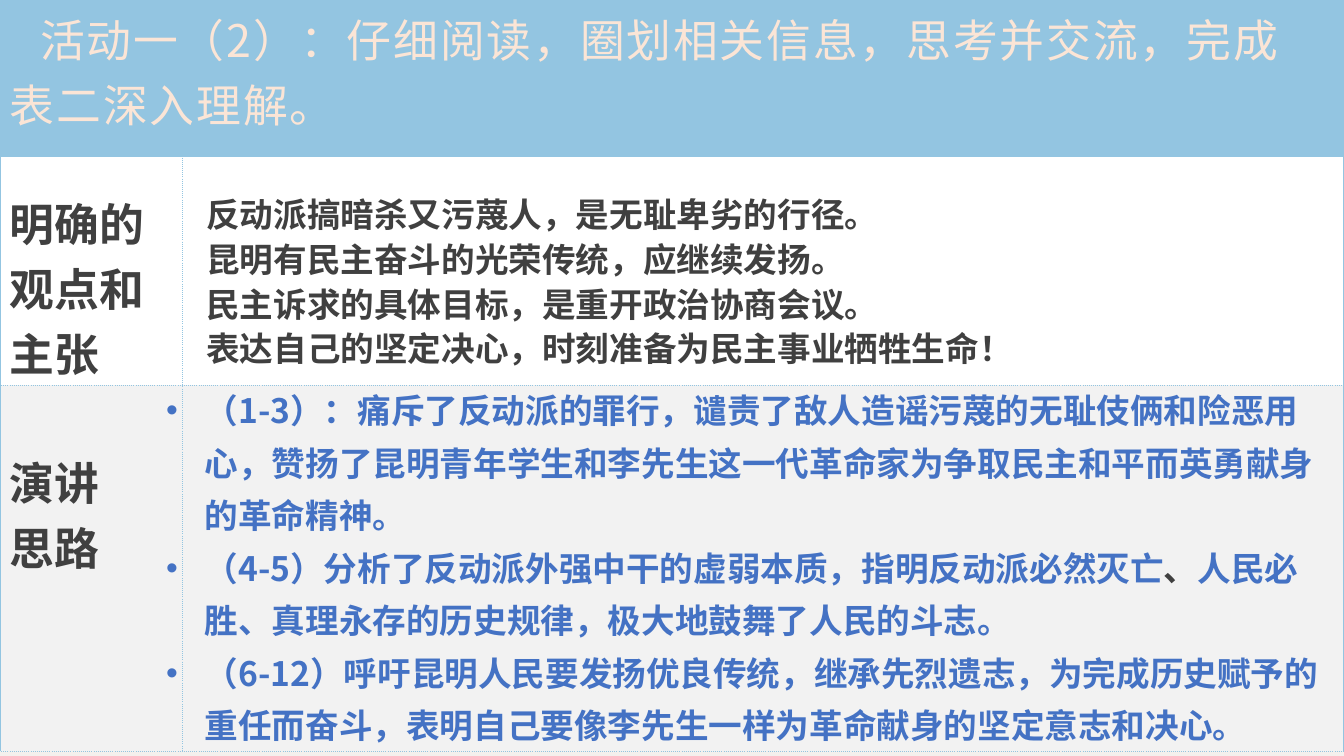
from lxml import etree
from pptx import Presentation
from pptx.dml.color import RGBColor
from pptx.enum.text import MSO_ANCHOR
from pptx.oxml.ns import qn
from pptx.util import Cm, Pt

TOP = MSO_ANCHOR.TOP
FONT = "Noto Sans CJK SC"
SKY = RGBColor(0x93, 0xC5, 0xE1)
PEACH = RGBColor(0xFB, 0xE5, 0xD6)
DARK = RGBColor(0x40, 0x40, 0x40)
BLUE = RGBColor(0x44, 0x72, 0xC4)
WHITE = RGBColor(0xFF, 0xFF, 0xFF)
PALE = RGBColor(0xF2, 0xF2, 0xF2)
CREAM = RGBColor(0xF4, 0xF0, 0xED)

COLS = [4.6, 29.28]
ROWS = [3.94, 5.77, 9.22]

TITLE = ["活动一（2）：仔细阅读，圈划相关信息，思考并交流，完成",
         "表二深入理解。"]
VIEWS = ["反动派搞暗杀又污蔑人，是无耻卑劣的行径。",
         "昆明有民主奋斗的光荣传统，应继续发扬。",
         "民主诉求的具体目标，是重开政治协商会议。",
         "表达自己的坚定决心，时刻准备为民主事业牺牲生命！"]
# A paragraph is a string, or a list of (text, colour) runs
IDEAS = [
    "（1-3）：痛斥了反动派的罪行，谴责了敌人造谣污蔑的无耻伎俩和险恶用心，"
    "赞扬了昆明青年学生和李先生这一代革命家为争取民主和平而英勇献身的革命精神。",
    [("（4-5）分析了反动派外强中干的虚弱本质，指明反动派必然灭亡", BLUE),
     ("、", DARK),
     ("人民必胜、真理永存的历史规律，极大地鼓舞了人民的斗志。", BLUE)],
    "（6-12）呼吁昆明人民要发扬优良传统，继承先烈遗志，为完成历史赋予的重任而奋斗，"
    "表明自己要像李先生一样为革命献身的坚定意志和决心。",
]


def add_text(frame, paras, size, color, bold=True, pitch=None, track=0, first=0, bullet=False):
    """Fill a text frame; pitch is line height in points, first is the first-line indent."""
    frame.word_wrap = True
    for i, para in enumerate(paras):
        p = frame.paragraphs[0] if i == 0 else frame.add_paragraph()
        if pitch:
            p.line_spacing = Pt(pitch)
        props = p._p.get_or_add_pPr()
        if bullet:
            props.set("marL", str(Cm(0.97)))
            props.set("indent", str(-Cm(0.97)))
            etree.SubElement(props, qn("a:buFont")).set("typeface", "Arial")
            etree.SubElement(props, qn("a:buChar")).set("char", "•")
        elif first and i == 0:
            props.set("indent", str(Cm(first)))
        for text, tint in [(para, color)] if isinstance(para, str) else para:
            run = p.add_run()
            run.text = text
            run.font.size = Pt(size)
            run.font.bold = bold
            run.font.name = FONT
            run.font.color.rgb = tint
            rpr = run.font._element
            etree.SubElement(rpr, qn("a:ea")).set("typeface", FONT)
            if track:
                rpr.set("spc", str(round(track * 100)))


def style_cell(cell, fill, solid, top=0.13):
    """Set fill, margins and borders; sides in solid are thick, the rest dotted."""
    cell.vertical_anchor = TOP
    cell.margin_left = cell.margin_right = Cm(0.25)
    cell.margin_top, cell.margin_bottom = Cm(top), 0
    props = cell._tc.get_or_add_tcPr()
    for side in "LRTB":
        thick = side in solid
        line = etree.SubElement(props, qn("a:ln" + side), w=str(Pt(1.5 if thick else 0.25)))
        paint = etree.SubElement(line, qn("a:solidFill"))
        etree.SubElement(paint, qn("a:srgbClr"), val=str(SKY))
        etree.SubElement(line, qn("a:prstDash"), val="solid" if thick else "sysDot")
    cell.fill.solid()
    cell.fill.fore_color.rgb = fill


def add_grid(slide, left, top):
    """Table with the heading band and the two row labels."""
    table = slide.shapes.add_table(len(ROWS), len(COLS), Cm(left), Cm(top),
                                   Cm(sum(COLS)), Cm(sum(ROWS))).table
    table.first_row = table.horz_banding = False
    for col, width in zip(table.columns, COLS):
        col.width = Cm(width)
    for row, height in zip(table.rows, ROWS):
        row.height = Cm(height)

    # Heading band
    head = table.cell(0, 0)
    head.merge(table.cell(0, 1))
    for cell in table.rows[0].cells:
        style_cell(cell, SKY, "LRTB")
    add_text(head.text_frame, TITLE, 32, PEACH, bold=False, track=1.3, first=0.76)

    # Row labels
    labels = [(["明确的观点和主张"], WHITE, 0.84), (["演讲", "思路"], PALE, 1.6)]
    for i, (label, fill, pad) in enumerate(labels, 1):
        style_cell(table.cell(i, 0), fill, "L", pad)
        style_cell(table.cell(i, 1), fill, "R")
        add_text(table.cell(i, 0).text_frame, label, 32, DARK)


def add_body(slide, box, paras, color, **form):
    """Text box laid over a table row."""
    frame = slide.shapes.add_textbox(*map(Cm, box)).text_frame
    add_text(frame, paras, 24, color, **form)


def main():
    deck = Presentation()
    deck.slide_width, deck.slide_height = Cm(33.87), Cm(19.05)
    slide = deck.slides.add_slide(deck.slide_layouts[6])
    back = slide.background.fill
    back.solid()
    back.fore_color.rgb = CREAM
    add_grid(slide, 0, 0)
    add_body(slide, (4.95, 4.65, 25.07, 4.78), VIEWS, DARK, pitch=32)
    add_body(slide, (3.94, 9.4, 29.64, 9.6), IDEAS, BLUE, pitch=37.5, bullet=True)
    deck.save("out.pptx")


if __name__ == "__main__":
    main()
